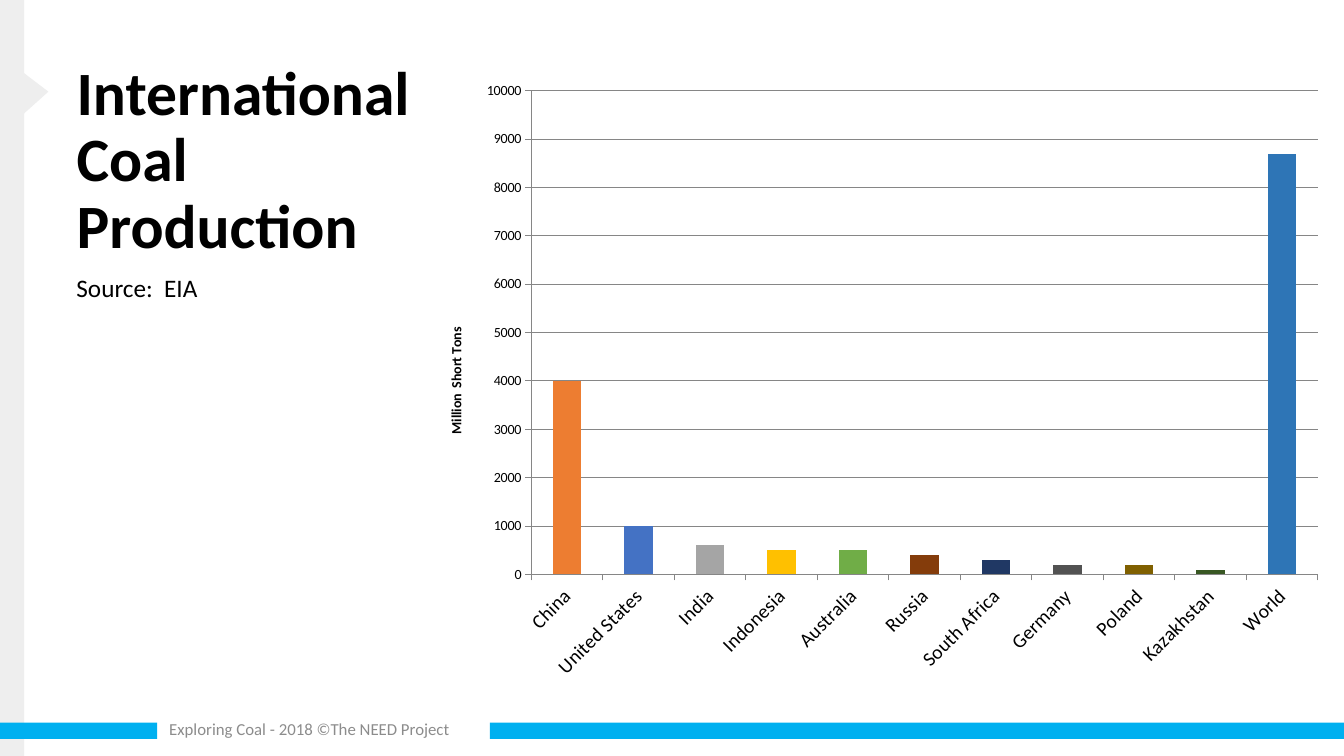
from lxml import etree
from pptx import Presentation, util as u
from pptx.chart import data as chart_data
from pptx.dml import color as dml
from pptx.enum import chart as chart_enum, shapes, text
from pptx.oxml import ns

WIDTH, HEIGHT = 13.33, 7.5
FONT = "Calibri"
STRIP, FOOTER_BLUE, AXIS_GREY = "EEEEEE", "00B0F0", "868686"
PRODUCTION = [
    ("China", 4000, "ED7D31"), ("United States", 1000, "4472C4"),
    ("India", 600, "A5A5A5"), ("Indonesia", 500, "FFC000"),
    ("Australia", 500, "70AD47"), ("Russia", 400, "843C0B"),
    ("South Africa", 300, "203864"), ("Germany", 200, "525252"),
    ("Poland", 200, "806000"), ("Kazakhstan", 100, "385723"),
    ("World", 8700, "2E75B6"),
]


def rgb(value):
    """Turn a hex string into a colour."""
    return dml.RGBColor.from_string(value)


def inches(box):
    """Convert a box of numbers to lengths."""
    return [u.Inches(length) for length in box]


def paint(shape, colour):
    """Give a shape a flat fill without line or shadow."""
    shape.shadow.inherit = False
    shape.fill.solid()
    shape.fill.fore_color.rgb = rgb(colour)
    shape.line.fill.background()


def format_font(font, size, colour="000000", bold=False):
    """Set typeface, size, colour and weight."""
    font.name, font.size, font.bold = FONT, u.Pt(size), bold
    font.color.rgb = rgb(colour)


def write(shape, words, size, colour="000000", bold=False, wrap=True,
          anchor=text.MSO_ANCHOR.MIDDLE):
    """Write one formatted run into a shape."""
    frame = shape.text_frame
    frame.word_wrap, frame.vertical_anchor = wrap, anchor
    paragraph = frame.paragraphs[0]
    paragraph.alignment = text.PP_ALIGN.LEFT
    run = paragraph.add_run()
    run.text = words
    format_font(run.font, size, colour, bold)
    return paragraph


def add_bar(slide, box, colour):
    """Add a plain rectangle."""
    paint(slide.shapes.add_shape(shapes.MSO_SHAPE.RECTANGLE, *inches(box)), colour)


def add_side_strip(slide, width):
    """Add the left strip with its pointer beside the title."""
    add_bar(slide, (0, 0, width, HEIGHT), STRIP)
    corners = [inches(corner) for corner in ((0.1, 1.25), (0.1, 0.62), (0.48, 0.91))]
    builder = slide.shapes.build_freeform(*corners[0])
    builder.add_line_segments(corners[1:], close=True)
    paint(builder.convert_to_shape(), STRIP)


def add_footer(slide, left, top, width, height):
    """Add the footer line with bars on both sides."""
    right = left + width
    bar_top = top + 0.14
    add_bar(slide, (0, bar_top, left - 0.02, 0.16), FOOTER_BLUE)
    add_bar(slide, (right, bar_top, WIDTH - right, 0.16), FOOTER_BLUE)
    label = slide.shapes.add_textbox(*inches((left, top, width, height)))
    write(label, "Exploring Coal - 2018 ©The NEED Project", 12, "8C8C8C")


def add_heading(slide, left, top, width, height):
    """Place the title and the source line under it."""
    title = slide.shapes.title
    title.left, title.top, title.width, title.height = inches((left, top, width, height))
    write(title, "International Coal Production", 44, bold=True).line_spacing = 0.9
    source = slide.shapes.add_textbox(*inches((left, top + height - 0.08, 1.62, 0.4)))
    write(source, "Source:  EIA", 18, wrap=False, anchor=text.MSO_ANCHOR.TOP)


def place_plot(chart, **shares):
    """Fix the inner plot area as shares of the chart."""
    plot_area = chart.element.xpath("c:chart/c:plotArea")[0]
    for layout in plot_area.findall(ns.qn("c:layout")):
        plot_area.remove(layout)
    layout = etree.Element(ns.qn("c:layout"))
    plot_area.insert(0, layout)
    manual = etree.SubElement(layout, ns.qn("c:manualLayout"))
    settings = {"layoutTarget": "inner", "xMode": "edge", "yMode": "edge", **shares}
    for name, value in settings.items():
        etree.SubElement(manual, ns.qn(f"c:{name}")).set("val", str(value))


def add_production_chart(slide, left, top, width, height):
    """Add the column chart with one colour per country."""
    countries, tons, colours = zip(*PRODUCTION)
    data = chart_data.CategoryChartData()
    data.categories = countries
    data.add_series("Series 1", tons)
    chart = slide.shapes.add_chart(
        chart_enum.XL_CHART_TYPE.COLUMN_CLUSTERED,
        *inches((left, top, width, height)), data).chart
    format_font(chart.font, 10)
    chart.has_legend = chart.has_title = False
    plot = chart.plots[0]
    plot.gap_width, plot.vary_by_categories = 150, False
    series = plot.series[0]
    series.format.fill.solid()
    series.format.fill.fore_color.rgb = rgb("4472C4")
    for index, colour in enumerate(colours):
        fill = series.points[index].format.fill
        fill.solid()
        fill.fore_color.rgb = rgb(colour)

    countries_axis, tons_axis = chart.category_axis, chart.value_axis
    for axis, size in ((countries_axis, 14), (tons_axis, 10)):
        axis.major_tick_mark = chart_enum.XL_TICK_MARK.OUTSIDE
        axis.format.line.color.rgb = rgb(AXIS_GREY)
        format_font(axis.tick_labels.font, size)
    tons_axis.minimum_scale, tons_axis.maximum_scale = 0, 10000
    tons_axis.major_unit = 1000
    tons_axis.has_major_gridlines = True
    tons_axis.major_gridlines.format.line.color.rgb = rgb(AXIS_GREY)
    run = tons_axis.axis_title.text_frame.paragraphs[0].add_run()
    run.text = "Million  Short Tons"
    format_font(run.font, 10, bold=True)
    for query, degrees in (("c:catAx/c:txPr", -45), ("c:valAx/c:title", -90)):
        for body in chart.element.xpath(f".//{query}//a:bodyPr"):
            body.set("rot", str(degrees * 60000))
            body.set("vert", "horz")
    place_plot(chart, x=1.03 / width, y=0.2 / height, w=7.8 / width, h=4.8 / height)


def main():
    """Build and save the slide."""
    presentation = Presentation()
    presentation.slide_width, presentation.slide_height = inches((WIDTH, HEIGHT))
    slide = presentation.slides.add_slide(presentation.slide_layouts[5])
    add_side_strip(slide, 0.24)
    add_footer(slide, 1.58, 7.03, 3.28, 0.4)
    add_heading(slide, 0.66, 0.48, 3.58, 2.25)
    add_production_chart(slide, 4.24, 0.7, 9.02, 6.16)
    presentation.save("out.pptx")


if __name__ == "__main__":
    main()
